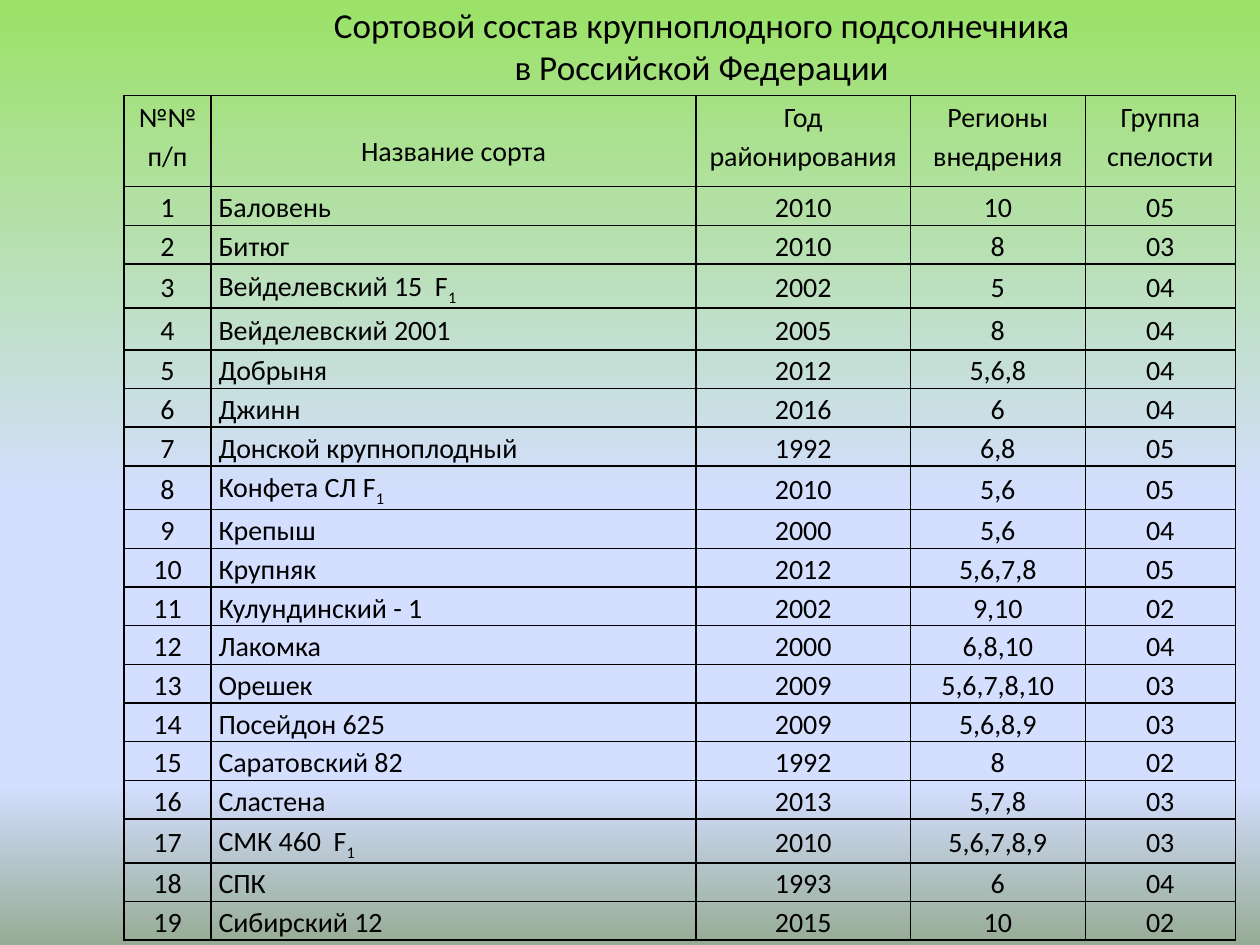
import lxml.etree
import pptx
import pptx.dml.color
import pptx.enum.text
import pptx.oxml.ns
import pptx.util

Pt = pptx.util.Pt
qn = pptx.oxml.ns.qn
ALIGN = pptx.enum.text.PP_ALIGN
ANCHOR = pptx.enum.text.MSO_ANCHOR

COLORS = {
    "text": "000000",
    "border": "000000",
    "green": "9BE266",
    "blue": "D4DEFF",
    "grey": "96AB94",
}
BACKGROUND_STOPS = [(0, "green"), (53, "blue"), (83, "blue"), (100, "grey")]

TITLE = ["Сортовой состав крупноплодного подсолнечника", "в Российской Федерации"]
HEADERS = ["№№ п/п", "Название сорта", "Год районирования",
           "Регионы внедрения", "Группа спелости"]
# Name, year, regions, ripeness group; "_" marks a subscript
VARIETIES = [
    ("Баловень", "2010", "10", "05"),
    ("Битюг", "2010", "8", "03"),
    ("Вейделевский 15  F_1", "2002", "5", "04"),
    ("Вейделевский 2001", "2005", "8", "04"),
    ("Добрыня", "2012", "5,6,8", "04"),
    ("Джинн", "2016", "6", "04"),
    ("Донской крупноплодный", "1992", "6,8", "05"),
    ("Конфета СЛ F_1", "2010", "5,6", "05"),
    ("Крепыш", "2000", "5,6", "04"),
    ("Крупняк", "2012", "5,6,7,8", "05"),
    ("Кулундинский - 1", "2002", "9,10", "02"),
    ("Лакомка", "2000", "6,8,10", "04"),
    ("Орешек", "2009", "5,6,7,8,10", "03"),
    ("Посейдон 625", "2009", "5,6,8,9", "03"),
    ("Саратовский 82", "1992", "8", "02"),
    ("Сластена", "2013", "5,7,8", "03"),
    ("СМК 460  F_1", "2010", "5,6,7,8,9", "03"),
    ("СПК", "1993", "6", "04"),
    ("Сибирский 12", "2015", "10", "02"),
]
COLUMN_WIDTHS = [49.7, 277.2, 122.4, 100, 85.7]
HEADER_HEIGHT, ROW_HEIGHT, SUBSCRIPT_HEIGHT = 52, 22, 25
TALL_ROWS = {4: 24}
NAME_COLUMN = 1


class SlideBuilder:
    font_name = "Calibri"
    title_size = 20
    table_size = 16
    header_spacing = 1.15
    body_spacing = 1.13  # keeps all the rows on the slide

    def __init__(self, presentation):
        self.slide = presentation.slides.add_slide(presentation.slide_layouts[5])

    def background(self, stops):
        fill = self.slide.background.fill
        fill.gradient()
        fill.gradient_angle = 270
        stop_list = next(self.slide.element.iter(qn("a:gsLst")))
        for old_stop in list(stop_list):
            stop_list.remove(old_stop)
        for percent, color in stops:
            stop = lxml.etree.SubElement(stop_list, qn("a:gs"), pos=str(percent * 1000))
            lxml.etree.SubElement(stop, qn("a:srgbClr"), val=COLORS[color])

    def format_paragraph(self, paragraph, size, alignment, spacing):
        paragraph.alignment = alignment
        paragraph.line_spacing = spacing
        paragraph.font.name = self.font_name
        paragraph.font.size = Pt(size)
        paragraph.font.bold = False
        paragraph.font.color.rgb = pptx.dml.color.RGBColor.from_string(COLORS["text"])

    def title(self, lines, left, top, width, height):
        shape = self.slide.shapes.title
        shape.left, shape.top, shape.width, shape.height = map(Pt, (left, top, width, height))
        frame = shape.text_frame
        frame.word_wrap = True
        frame.auto_size = pptx.enum.text.MSO_AUTO_SIZE.NONE
        frame.vertical_anchor = ANCHOR.MIDDLE
        frame.text = "\n".join(lines)
        for paragraph in frame.paragraphs:
            self.format_paragraph(paragraph, self.title_size, ALIGN.CENTER, 1.0)

    def borders(self, cell):
        properties = cell._tc.get_or_add_tcPr()
        for position, side in enumerate(("lnL", "lnR", "lnT", "lnB")):
            line = lxml.etree.Element(qn(f"a:{side}"), w=str(Pt(1)))
            solid = lxml.etree.SubElement(line, qn("a:solidFill"))
            lxml.etree.SubElement(solid, qn("a:srgbClr"), val=COLORS["border"])
            properties.insert(position, line)

    def cell(self, cell, text, alignment, anchor, spacing, margin_top=0):
        cell.fill.background()
        self.borders(cell)
        cell.margin_left = cell.margin_right = Pt(4.3)
        cell.margin_top, cell.margin_bottom = Pt(margin_top), Pt(0)
        cell.vertical_anchor = anchor
        paragraph = cell.text_frame.paragraphs[0]
        base, _, subscript = text.partition("_")
        paragraph.add_run().text = base
        if subscript:
            run = paragraph.add_run()
            run.text = subscript
            run._r.get_or_add_rPr().set("baseline", "-25000")
        self.format_paragraph(paragraph, self.table_size, alignment, spacing)

    def table(self, headers, rows, left, top, widths, heights):
        table = self.slide.shapes.add_table(
            len(heights), len(widths), Pt(left), Pt(top),
            Pt(sum(widths)), Pt(sum(heights))).table
        table.first_row = table.horz_banding = False
        for column, width in zip(table.columns, widths):
            column.width = Pt(width)
        for row, height in zip(table.rows, heights):
            row.height = Pt(height)

        # Header row: the name sits lower than the other headings
        for column, text in enumerate(headers):
            margin_top = 19.5 if column == NAME_COLUMN else 0
            self.cell(table.cell(0, column), text, ALIGN.CENTER, ANCHOR.TOP,
                      self.header_spacing, margin_top)

        # Numbered varieties
        for number, values in enumerate(rows, 1):
            for column, text in enumerate((str(number), *values)):
                alignment = ALIGN.LEFT if column == NAME_COLUMN else ALIGN.CENTER
                self.cell(table.cell(number, column), text, alignment, ANCHOR.MIDDLE,
                          self.body_spacing)


def row_height(number, name):
    if "_" in name:
        return SUBSCRIPT_HEIGHT
    return TALL_ROWS.get(number, ROW_HEIGHT)


def main():
    presentation = pptx.Presentation()
    presentation.slide_width, presentation.slide_height = Pt(720), Pt(540)
    builder = SlideBuilder(presentation)
    builder.background(BACKGROUND_STOPS)
    builder.title(TITLE, 82, 0, 638, 52)
    heights = [HEADER_HEIGHT] + [
        row_height(number, variety[0]) for number, variety in enumerate(VARIETIES, 1)]
    builder.table(HEADERS, VARIETIES, 70.9, 54.7, COLUMN_WIDTHS, heights)
    presentation.save("out.pptx")


if __name__ == "__main__":
    main()
